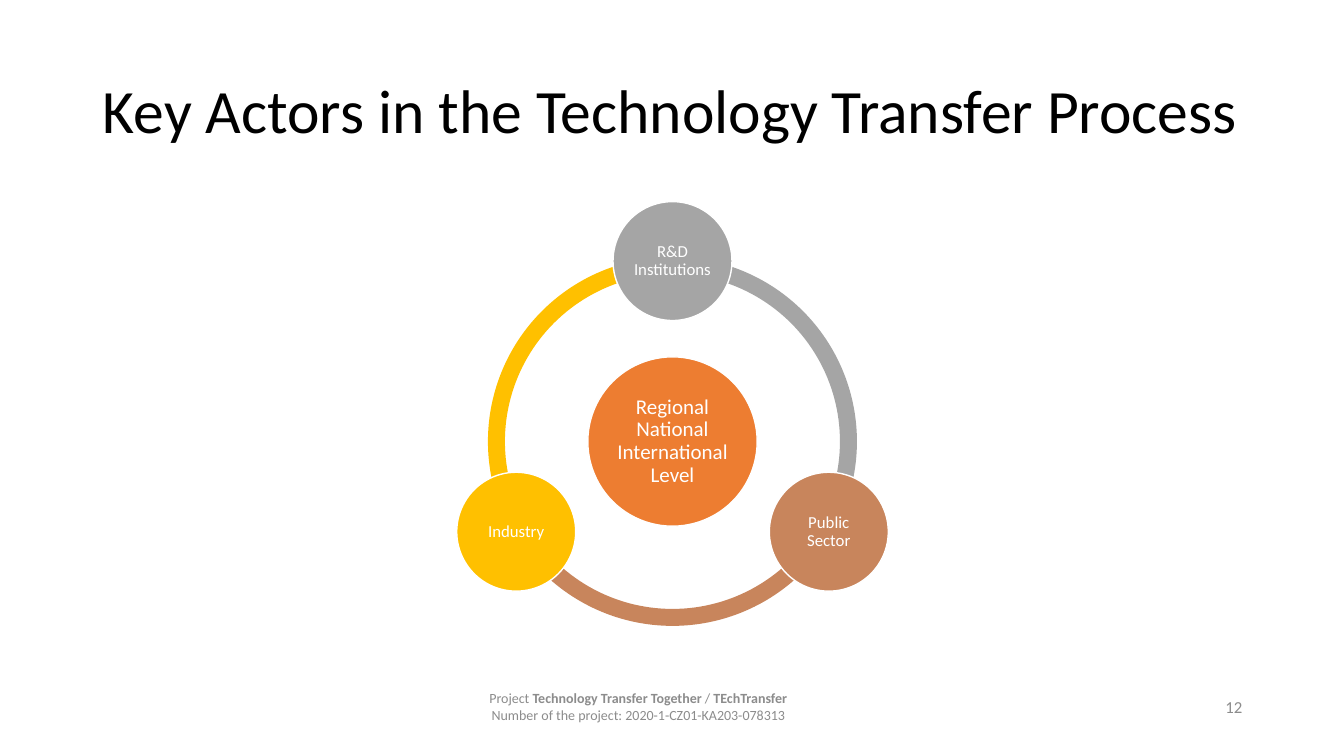
"""Build the slide on key actors in the technology transfer process."""
from math import cos, radians, sin

from pptx import Presentation
from pptx.dml.color import RGBColor
from pptx.enum.shapes import MSO_SHAPE
from pptx.enum.text import MSO_ANCHOR, MSO_AUTO_SIZE, PP_ALIGN
from pptx.util import Inches, Pt

COLORS = {
    "black": "000000",
    "white": "FFFFFF",
    "footer": "8C8C8C",
    "level": "ED7D31",
    "research": "A5A5A5",
    "public": "C8855C",
    "industry": "FFC000",
}
CENTER_X, CENTER_Y = 6.67, 4.38
ORBIT_RADIUS = 1.79
RING_SIZE = 3.66
RING_THICKNESS = 0.046


def add_span(para, text, size, color, bold=False):
    span = para.add_run()
    span.text = text
    span.font.name = "Calibri"
    span.font.size = Pt(size)
    span.font.bold = bold
    span.font.color.rgb = RGBColor.from_string(COLORS[color])


def add_round(page, kind, center_x, center_y, size, color):
    shape = page.shapes.add_shape(
        kind, Inches(center_x - size / 2), Inches(center_y - size / 2), Inches(size), Inches(size))
    shape.shadow.inherit = False
    shape.fill.solid()
    shape.fill.fore_color.rgb = RGBColor.from_string(COLORS[color])
    shape.line.fill.background()
    return shape


deck = Presentation()
deck.slide_width, deck.slide_height = Inches(13.33), Inches(7.5)
page = deck.slides.add_slide(deck.slide_layouts[5])

title = page.shapes.title
title.left, title.top, title.width, title.height = Inches(0.92), Inches(0.4), Inches(11.5), Inches(1.45)
title.text_frame.auto_size = MSO_AUTO_SIZE.NONE
title.text_frame.vertical_anchor = MSO_ANCHOR.MIDDLE
para = title.text_frame.paragraphs[0]
para.alignment = PP_ALIGN.LEFT
para.line_spacing = 0.9
add_span(para, "Key Actors in the Technology Transfer Process", 44, "black")

footers = [
    (11.53, 0.89, PP_ALIGN.RIGHT, 12, [[("12", False)]]),
    (4.42, 3.82, PP_ALIGN.CENTER, 10, [
        [("Project ", False), ("Technology Transfer Together", True), (" / ", False), ("TEchTransfer", True)],
        [("Number of the project: 2020-1-CZ01-KA203-078313", False)],
    ]),
]
for left, width, alignment, size, lines in footers:
    box = page.shapes.add_textbox(Inches(left), Inches(6.81), Inches(width), Inches(0.4))
    frame = box.text_frame
    frame.word_wrap = True
    frame.vertical_anchor = MSO_ANCHOR.MIDDLE
    for index, line in enumerate(lines):
        para = frame.add_paragraph() if index else frame.paragraphs[0]
        para.alignment = alignment
        for text, bold in line:
            add_span(para, text, size, "footer", bold)

actors = [
    ("R&D Institutions", "research", 270),
    ("Public Sector", "public", 30),
    ("Industry", "industry", 150),
]
for name, color, angle in reversed(actors):
    arc = add_round(page, MSO_SHAPE.BLOCK_ARC, CENTER_X, CENTER_Y, RING_SIZE, color)
    for index, value in enumerate((angle * 0.6, (angle + 120) % 360 * 0.6, RING_THICKNESS)):
        arc.adjustments[index] = value

circles = [("Regional National International Level", "level", CENTER_X, CENTER_Y, 1.68, 15)]
for name, color, angle in actors:
    circles.append((
        name, color,
        CENTER_X + ORBIT_RADIUS * cos(radians(angle)),
        CENTER_Y + ORBIT_RADIUS * sin(radians(angle)),
        1.18, 12))

for name, color, center_x, center_y, size, font_size in circles:
    circle = add_round(page, MSO_SHAPE.OVAL, center_x, center_y, size, color)
    circle.line.color.rgb = RGBColor.from_string(COLORS["white"])
    circle.line.width = Pt(1)
    frame = circle.text_frame
    frame.word_wrap = True
    frame.vertical_anchor = MSO_ANCHOR.MIDDLE
    frame.margin_left = frame.margin_right = frame.margin_top = frame.margin_bottom = Inches(0.02)
    para = frame.paragraphs[0]
    para.alignment = PP_ALIGN.CENTER
    para.line_spacing = 0.9
    add_span(para, name, font_size, "white")

deck.save("out.pptx")
